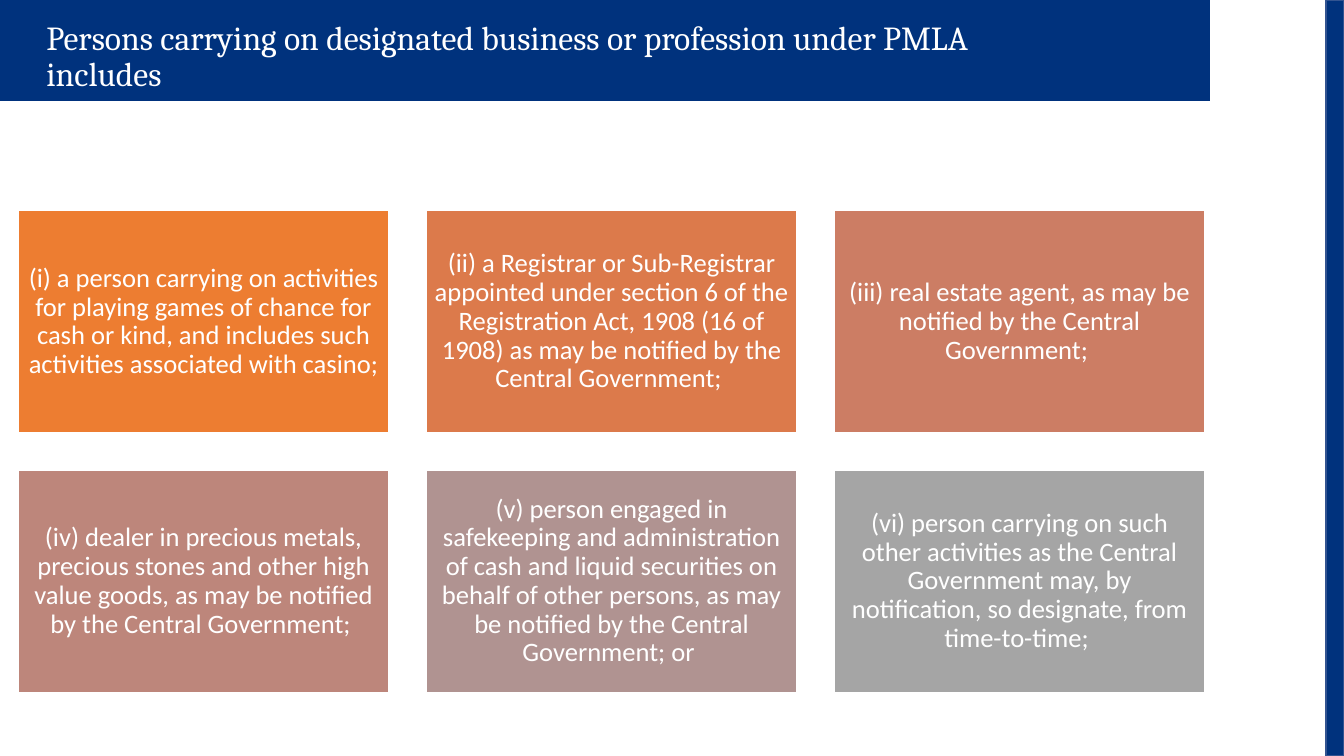
from lxml import etree
from pptx import Presentation
from pptx import util as u
from pptx.dml.color import RGBColor
from pptx.enum import shapes, text

NAVY = RGBColor(0x00, 0x32, 0x7D)
EDGE_BLUE = RGBColor(0x32, 0x54, 0x91)
WHITE = RGBColor(0xFF, 0xFF, 0xFF)

CARDS = [
    (RGBColor(0xED, 0x7D, 0x31),
     "(i) a person carrying on activities for playing games of chance for cash "
     "or kind, and includes such activities associated with casino; "),
    (RGBColor(0xDC, 0x7A, 0x4B),
     "(ii) a Registrar or Sub-Registrar appointed under section 6 of the "
     "Registration Act, 1908 (16 of 1908) as may be notified by the Central "
     "Government; "),
    (RGBColor(0xCC, 0x7D, 0x64),
     "(iii) real estate agent, as may be notified by the Central Government; "),
    (RGBColor(0xBD, 0x86, 0x7B),
     "(iv) dealer in precious metals, precious stones and other high value "
     "goods, as may be notified by the Central Government; "),
    (RGBColor(0xB0, 0x93, 0x91),
     "(v) person engaged in safekeeping and administration of cash and liquid "
     "securities on behalf of other persons, as may be notified by the Central "
     "Government; or "),
    (RGBColor(0xA5, 0xA5, 0xA5),
     "(vi) person carrying on such other activities as the Central Government "
     "may, by notification, so designate, from time-to-time; "),
]


def paint(shape, fill, line=None):
    shape.shadow.inherit = False
    shape.fill.solid()
    shape.fill.fore_color.rgb = fill
    if line is None:
        shape.line.fill.background()
    else:
        shape.line.color.rgb = line
        shape.line.width = u.Pt(1)


def write(shape, wording, font, size, align, anchor):
    frame = shape.text_frame
    frame.word_wrap = True
    frame.auto_size = text.MSO_AUTO_SIZE.NONE
    frame.vertical_anchor = anchor
    paragraph = frame.paragraphs[0]
    paragraph.alignment = align
    paragraph.line_spacing = 0.9
    run = paragraph.add_run()
    run.text = wording
    run.font.name = font
    run.font.size = u.Pt(size)
    run.font.color.rgb = WHITE
    return frame


def add_header(slide, left, top, width, height):
    slant = 0.32
    builder = slide.shapes.build_freeform(left, top, scale=u.Inches(1))
    builder.add_line_segments([
        (left, top + height),
        (left + width - slant, top + height),
        (left + width, top),
    ], close=True)
    banner = builder.convert_to_shape()
    paint(banner, NAVY)

    title = slide.shapes.title
    title._element.addprevious(banner._element)
    title.left, title.top = u.Inches(left + 0.36), u.Inches(top + 0.16)
    title.width, title.height = u.Inches(10.36), u.Inches(0.64)
    write(title, "Persons carrying on designated business or profession under PMLA includes",
          "Cambria", 24, text.PP_ALIGN.LEFT, text.MSO_ANCHOR.TOP)


def add_side_bar(slide, left, top, width, height):
    bar = slide.shapes.add_shape(
        shapes.MSO_SHAPE.RECTANGLE,
        *map(u.Inches, (left, top, width, height)))
    paint(bar, NAVY, EDGE_BLUE)


def add_card_grid(slide, left, top, width, height, columns=3, gap=0.37):
    rows = len(CARDS) // columns
    card_width = (width - gap * (columns - 1)) / columns
    card_height = (height - gap * (rows - 1)) / rows
    for index, (fill, wording) in enumerate(CARDS):
        row, column = divmod(index, columns)
        card = slide.shapes.add_shape(
            shapes.MSO_SHAPE.RECTANGLE,
            u.Inches(left + column * (card_width + gap)),
            u.Inches(top + row * (card_height + gap)),
            u.Inches(card_width), u.Inches(card_height))
        paint(card, fill, WHITE)
        frame = write(card, wording, "Calibri", 19,
                      text.PP_ALIGN.CENTER, text.MSO_ANCHOR.MIDDLE)
        frame.margin_left = frame.margin_right = u.Inches(0.08)
        frame.margin_top = frame.margin_bottom = u.Inches(0.08)


def main():
    presentation = Presentation()
    presentation.slide_width = u.Inches(13.33)
    presentation.slide_height = u.Inches(7.5)
    slide = presentation.slides.add_slide(presentation.slide_layouts[5])
    add_header(slide, 0, 0, 12.07, 1.05)
    add_side_bar(slide, 13.15, 0, 0.18, 7.5)
    add_card_grid(slide, 0.18, 2.09, 11.77, 4.78)
    presentation.save("out.pptx")


if __name__ == "__main__":
    main()
